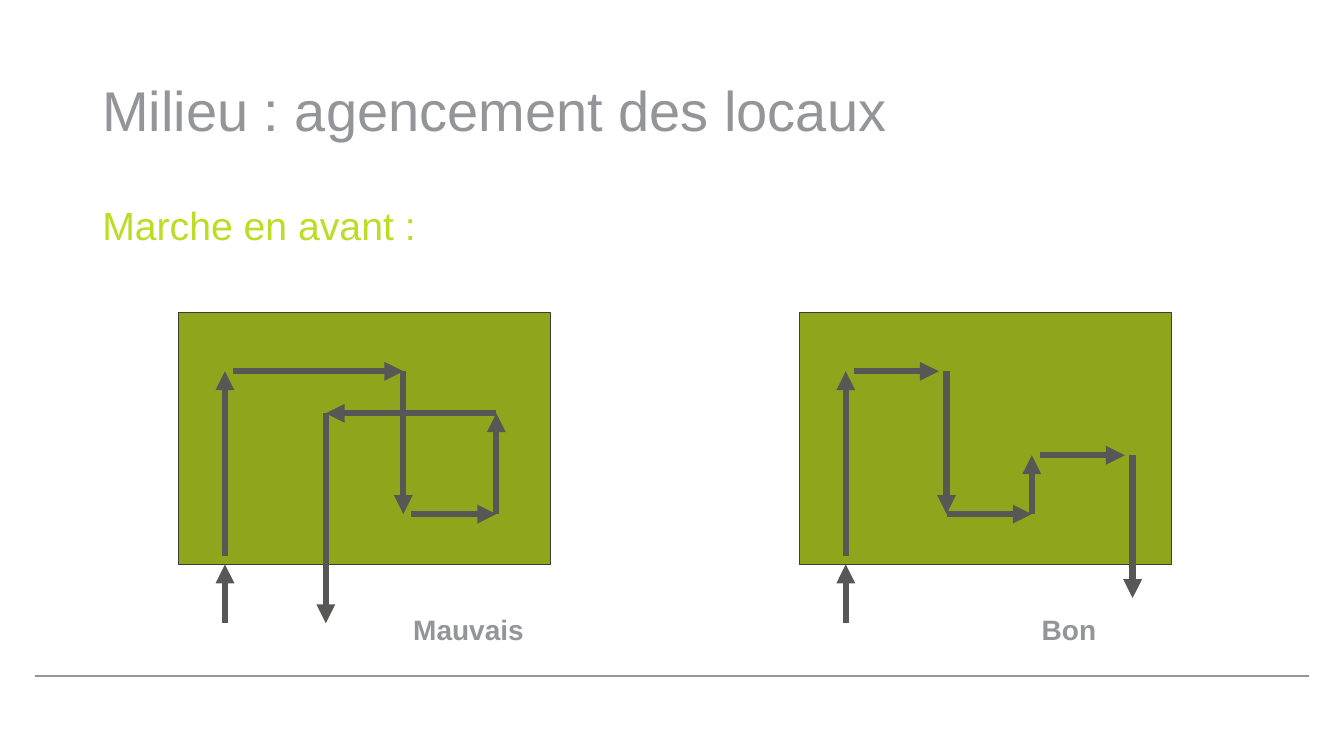
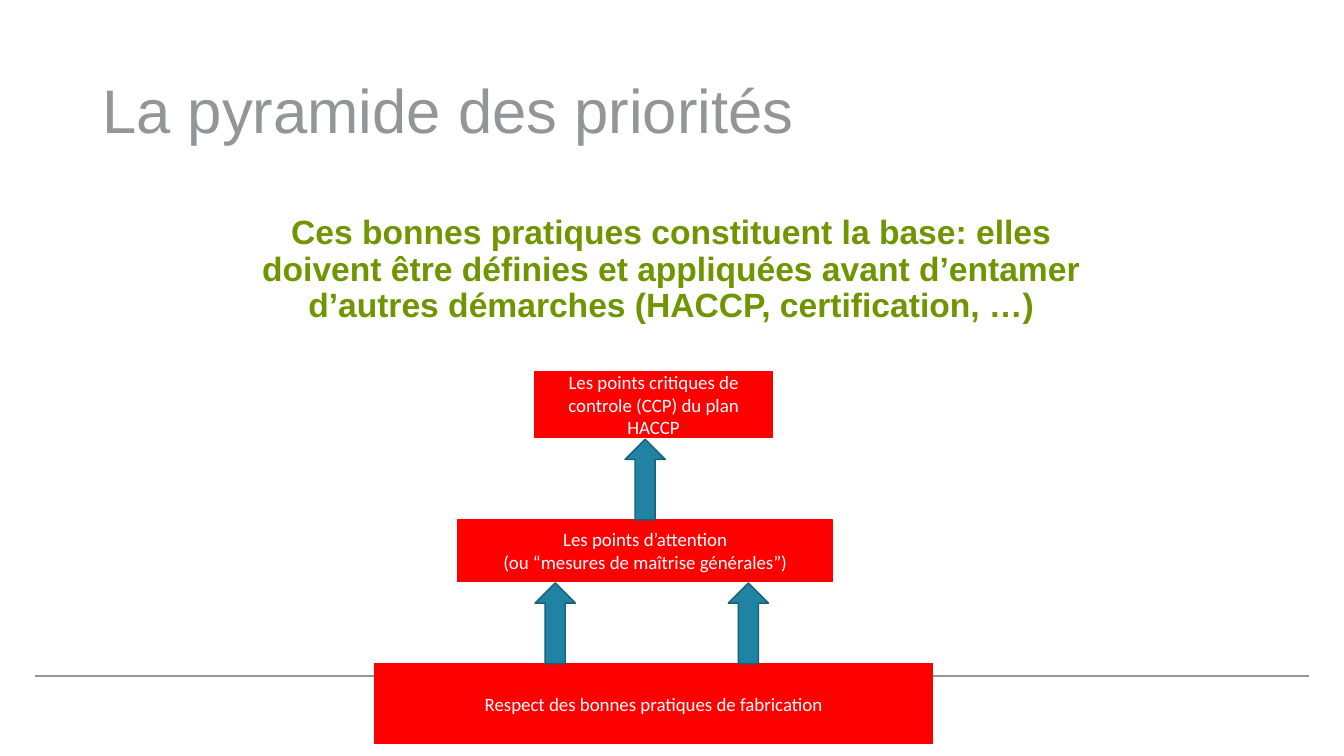
from lxml import etree
from pptx import Presentation
from pptx import util as u
from pptx.dml.color import RGBColor
from pptx.enum import shapes, text
from pptx.oxml.ns import qn

COLUMNS, ROWS = 160, 90
PLAN_COLUMNS, PLAN_ROWS = 48, 30
COLORS = {
    "grey": "939598",
    "lime": "BDDB27",
    "leaf": "6F9500",
    "floor": "8FA61C",
    "wall": "3C3C3B",
    "route": "575756",
    "red": "FF0000",
    "teal": "2183A3",
    "deep teal": "186179",
    "white": "FFFFFF",
}


def color(name):
    return RGBColor.from_string(COLORS[name])


def write(frame, words, size, ink, font="Arial", bold=False,
          align=text.PP_ALIGN.LEFT, anchor=text.MSO_ANCHOR.TOP, spacing=1.0):
    frame.word_wrap = True
    frame.vertical_anchor = anchor
    para = frame.paragraphs[0]
    para.text = words
    para.alignment = align
    para.line_spacing = spacing
    for level in [para, *para.runs]:
        level.font.name = font
        level.font.size = u.Pt(size)
        level.font.bold = bold
        level.font.color.rgb = color(ink)


class Slides:
    """Holds the style and the current page; lengths are grid columns and rows."""

    def __init__(self):
        self.deck = Presentation()
        self.deck.slide_width = u.Inches(13.333)
        self.deck.slide_height = u.Inches(7.5)
        self.page = None

    def x(self, columns):
        return round(self.deck.slide_width * columns / COLUMNS)

    def y(self, rows):
        return round(self.deck.slide_height * rows / ROWS)

    def area(self, left, top, width, height):
        return self.x(left), self.y(top), self.x(width), self.y(height)

    def start(self, title, size):
        self.page = self.deck.slides.add_slide(self.deck.slide_layouts[6])
        self.line((4.2, 80.5), (155.8, 80.5), "grey", 1)
        self.text((11, 4.8, 138, 17.4), title, size=size, ink="grey",
                  anchor=text.MSO_ANCHOR.MIDDLE, spacing=0.9)

    def text(self, area, words, **style):
        box = self.page.shapes.add_textbox(*self.area(*area))
        write(box.text_frame, words, **style)

    def shape(self, area, fill, edge, weight=1, kind=shapes.MSO_SHAPE.RECTANGLE):
        shape = self.page.shapes.add_shape(kind, *self.area(*area))
        shape.shadow.inherit = False
        shape.fill.solid()
        shape.fill.fore_color.rgb = color(fill)
        shape.line.color.rgb = color(edge)
        shape.line.width = u.Pt(weight)
        return shape

    def line(self, start, end, ink, weight, arrow=False):
        line = self.page.shapes.add_connector(
            shapes.MSO_CONNECTOR.STRAIGHT,
            self.x(start[0]), self.y(start[1]), self.x(end[0]), self.y(end[1]))
        line.line.color.rgb = color(ink)
        line.line.width = u.Pt(weight)
        if arrow:
            etree.SubElement(line.line._get_or_add_ln(), qn("a:tailEnd"), type="triangle")
        etree.SubElement(line._element.spPr, qn("a:effectLst"))

    def plan(self, left, route, label, label_column, label_width):
        """Draws a room, its arrows in cells of the room's own grid, and its label."""
        top, width, height = 37.2, 44.3, 30

        def spot(column, row):
            return left + column * width / PLAN_COLUMNS, top + row * height / PLAN_ROWS

        self.shape((left, top, width, height), "floor", "wall", 0.75)
        for start, end in route:
            self.line(spot(*start), spot(*end), "route", 4.5, arrow=True)
        self.text((*spot(label_column, 35.1), label_width, 5.2), label,
                  size=20, ink="grey", bold=True)

    def level(self, area, words):
        box = self.shape(area, "red", "red")
        write(box.text_frame, words, size=13.5, ink="white", font="Calibri",
              align=text.PP_ALIGN.CENTER, anchor=text.MSO_ANCHOR.MIDDLE)

    def up_arrow(self, center, bottom):
        width, height = 4.8, 9.6
        self.shape((center - width / 2, bottom - height, width, height),
                   "teal", "deep teal", kind=shapes.MSO_SHAPE.UP_ARROW)


def build_layout_page(slides):
    slides.start("Milieu : agencement des locaux", 40)
    slides.text((11, 24, 138, 55.6), "Marche en avant :", size=28, ink="lime", spacing=0.9)
    entry = [((6, 37), (6, 30)), ((6, 29), (6, 7))]
    crossing = [
        ((7, 7), (29, 7)), ((29, 7), (29, 24)), ((30, 24), (41, 24)),
        ((41, 24), (41, 12)), ((41, 12), (19, 12)), ((19, 12), (19, 37)),
    ]
    forward = [
        ((7, 7), (18, 7)), ((19, 7), (19, 24)), ((19, 24), (30, 24)),
        ((30, 24), (30, 17)), ((31, 17), (42, 17)), ((43, 17), (43, 34)),
    ]
    slides.plan(21.25, entry + crossing, "Mauvais", 29, 18.5)
    slides.plan(95.15, entry + forward, "Bon", 30, 13)


def build_pyramid_page(slides):
    slides.start("La pyramide des priorités", 44)
    slides.text(
        (28.2, 25.1, 103.4, 45.8),
        "Ces bonnes pratiques constituent la base: elles doivent être définies et "
        "appliquées avant d’entamer d’autres démarches (HACCP, certification, …)",
        size=24, ink="leaf", bold=True, align=text.PP_ALIGN.CENTER, spacing=0.9)
    base_top, middle_top = 79, 61.9
    slides.level((44.6, base_top, 66.4, 9.5), "Respect des bonnes pratiques de fabrication")
    slides.level((54.5, middle_top, 44.6, 7.3),
                 "Les points d’attention\v(ou “mesures de maîtrise générales”)")
    slides.level((63.7, 44.2, 28.2, 7.9),
                 "Les points critiques de controle (CCP) du plan HACCP")
    for center, bottom in [(66.1, base_top), (89.1, base_top), (76.8, middle_top)]:
        slides.up_arrow(center, bottom)


def main():
    slides = Slides()
    build_layout_page(slides)
    build_pyramid_page(slides)
    slides.deck.save("out.pptx")


if __name__ == "__main__":
    main()
